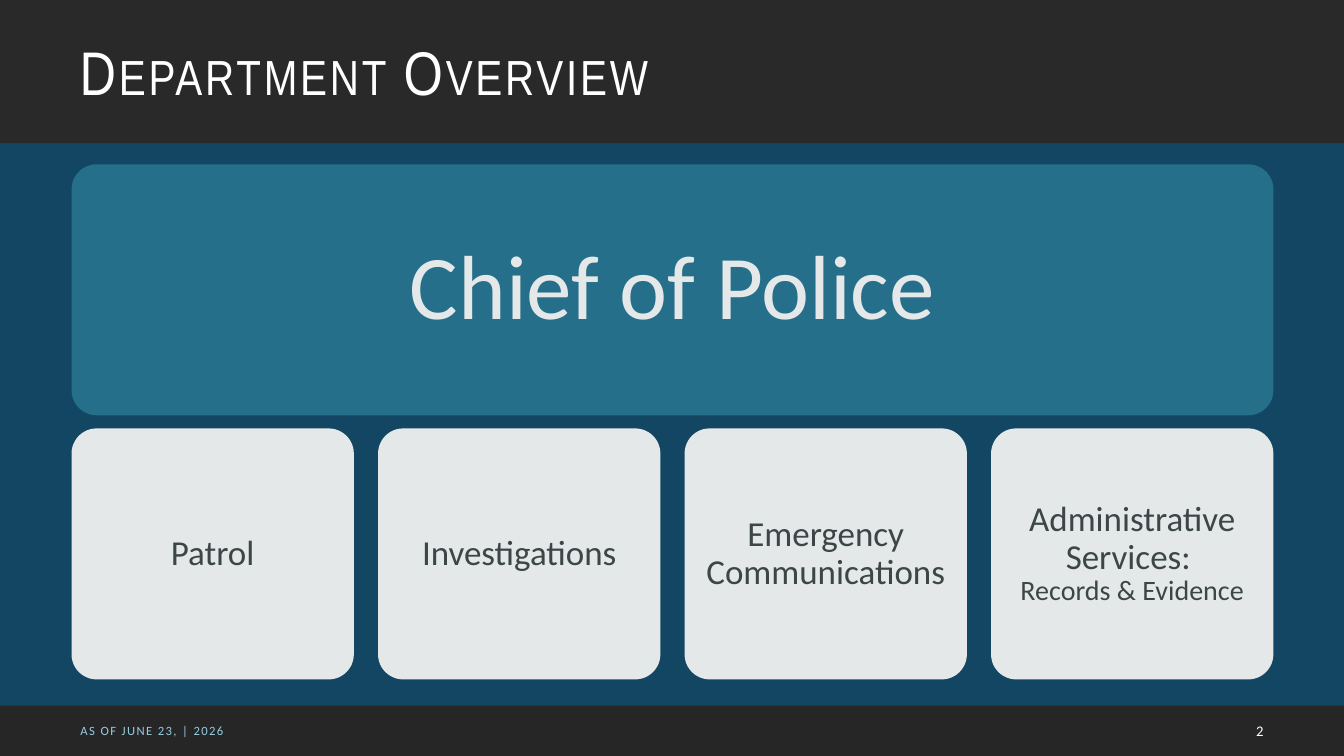
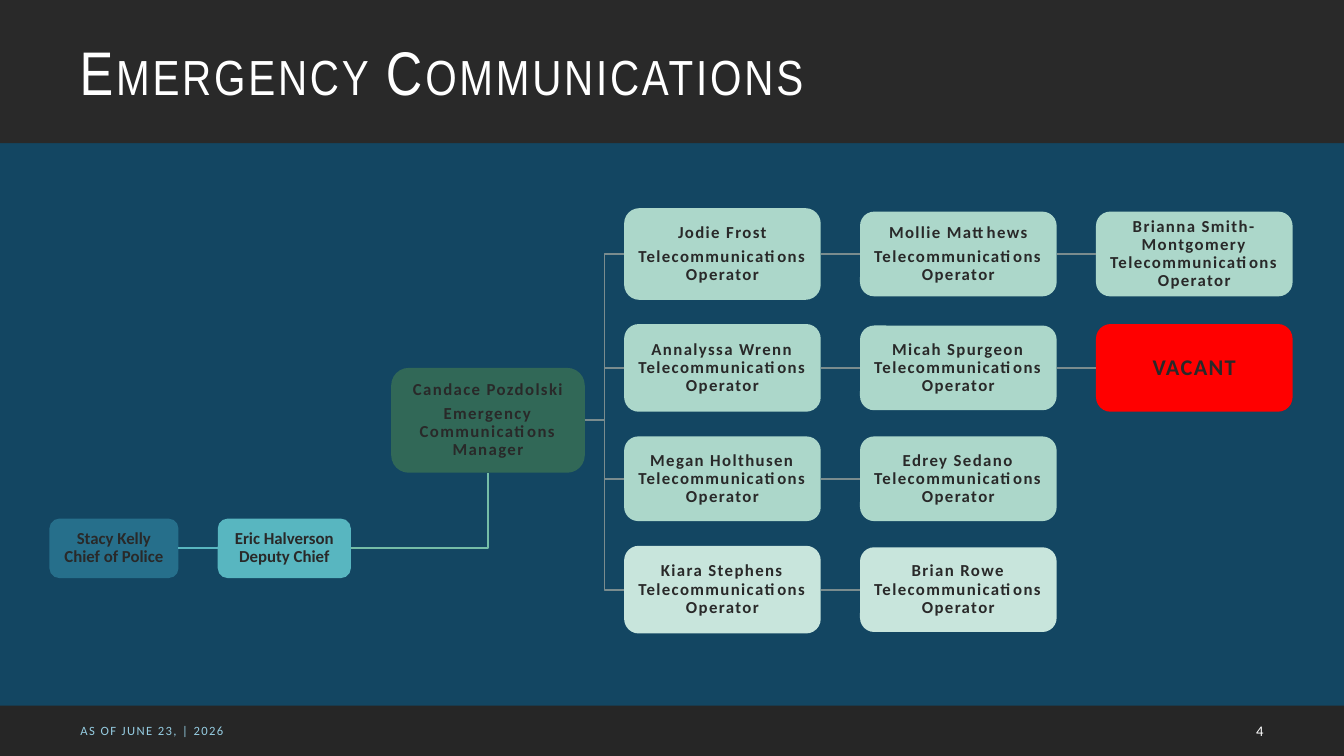
from pptx import Presentation
from pptx.dml.color import RGBColor
from pptx.enum.shapes import MSO_CONNECTOR, MSO_SHAPE
from pptx.enum.text import MSO_ANCHOR, PP_ALIGN
from pptx.oxml.ns import qn
from pptx.util import Inches, Pt
from lxml import etree

RECT, ROUNDED = MSO_SHAPE.RECTANGLE, MSO_SHAPE.ROUNDED_RECTANGLE
STRAIGHT, ELBOW = MSO_CONNECTOR.STRAIGHT, MSO_CONNECTOR.ELBOW
LEFT, CENTER, RIGHT = PP_ALIGN.LEFT, PP_ALIGN.CENTER, PP_ALIGN.RIGHT
MIDDLE = MSO_ANCHOR.MIDDLE
LEFT_SITE, BOTTOM_SITE, RIGHT_SITE = 1, 2, 3

COLORS = {
    "background": "134662",
    "title_band": "292929",
    "footer_band": "262626",
    "footer_text": "96CDE2",
    "white": "FFFFFF",
    "chief": "266F8B",
    "deputy": "58B6C0",
    "manager": "316857",
    "operator": "ACD7CA",
    "operator_light": "C8E5DC",
    "vacant": "FF0000",
    "division": "E4E8E8",
    "division_text": "3D4647",
    "staff_text": "292929",
    "staff_line": "7A8C8E",
    "manager_line": "75BDA7",
}
TITLE_FONT, BODY_FONT = "Arial Narrow", "Calibri"
SLIDE_WIDTH, SLIDE_HEIGHT = 13.33, 7.5
ROLE = "Telecommunications Operator"
VACANT = "VACANT"

DIVISIONS = [
    "Patrol",
    "Investigations",
    "Emergency\vCommunications",
    "Administrative Services: \vRecords & Evidence",
]
STAFF_ROWS = [
    (2.52, 0.91, "operator", "\n",
     ["Jodie Frost", "Mollie Matthews", "Brianna Smith-Montgomery"]),
    (3.65, 0.87, "operator", "\v",
     ["Annalyssa Wrenn", "Micah Spurgeon", VACANT]),
    (4.75, 0.84, "operator", "\v", ["Megan Holthusen", "Edrey Sedano"]),
    (5.85, 0.87, "operator_light", "\v", ["Kiara Stephens", "Brian Rowe"]),
]


def rgb(name):
    return RGBColor.from_string(COLORS[name])


def write(frame, text, size, color, font=BODY_FONT, align=CENTER, bold=False,
          tracking=0, small_caps=False, line_spacing=0.9):
    frame.word_wrap = True
    frame.vertical_anchor = MIDDLE
    frame.text = text
    for paragraph in frame.paragraphs:
        paragraph.alignment = align
        paragraph.line_spacing = line_spacing
        paragraph.font.name = font
        paragraph.font.size = Pt(size)
        paragraph.font.bold = bold
        paragraph.font.color.rgb = rgb(color)
        defaults = paragraph._p.pPr.find(qn("a:defRPr"))
        if tracking:
            defaults.set("spc", str(tracking * 100))
        if small_caps:
            defaults.set("cap", "small")
    for paragraph in frame.paragraphs[:-1]:
        paragraph.space_after = Pt(0.35 * size)


def set_insets(frame, left, top, right, bottom):
    frame.margin_left, frame.margin_top = Inches(left), Inches(top)
    frame.margin_right, frame.margin_bottom = Inches(right), Inches(bottom)


def add_block(slide, kind, box, fill):
    block = slide.shapes.add_shape(kind, *map(Inches, box))
    block.shadow.inherit = False
    block.fill.solid()
    block.fill.fore_color.rgb = rgb(fill)
    block.line.fill.background()
    return block


def add_label(slide, box, text, size, color, **style):
    label = slide.shapes.add_textbox(*map(Inches, box))
    write(label.text_frame, text, size, color, line_spacing=1.0, **style)


def add_card(slide, box, fill, text, size, color, inset, corner=None, **style):
    card = add_block(slide, ROUNDED, box, fill)
    if corner is not None:
        card.adjustments[0] = corner
    set_insets(card.text_frame, *[inset] * 4)
    write(card.text_frame, text, size, color, **style)
    return card


def add_staff(slide, left, middle, width, height, fill, text, size=12, tracking=1):
    box = (left, middle - height / 2, width, height)
    return add_card(slide, box, fill, text, size, "staff_text", 0.01,
                    bold=True, tracking=tracking)


def link(slide, start, end, color, kind=STRAIGHT, end_site=LEFT_SITE):
    connector = slide.shapes.add_connector(kind, 0, 0, 0, 0)
    connector.begin_connect(start, RIGHT_SITE)
    connector.end_connect(end, end_site)
    connector.line.color.rgb = rgb(color)
    connector.line.width = Pt(1.25)
    properties = connector._element.spPr
    etree.SubElement(properties, qn("a:effectLst"))
    if end_site == BOTTOM_SITE:
        properties.find(qn("a:prstGeom")).set("prst", "bentConnector2")


def add_framed_slide(deck, title, number):
    slide = deck.slides.add_slide(deck.slide_layouts[6])
    slide.background.fill.solid()
    slide.background.fill.fore_color.rgb = rgb("background")
    add_block(slide, RECT, (0, 7, SLIDE_WIDTH, 0.5), "footer_band")
    add_label(slide, (0.7, 7.05, 7.46, 0.4), "AS OF JUNE 23, | 2026", 9,
              "footer_text", align=LEFT, tracking=1)
    add_label(slide, (11.95, 7.05, 0.68, 0.4), number, 10.5, "white", align=RIGHT)
    band = add_block(slide, RECT, (0, 0, SLIDE_WIDTH, 1.42), "title_band")
    set_insets(band.text_frame, 0.79, 0.12, 0.1, 0.05)
    write(band.text_frame, title, 44, "white", font=TITLE_FONT, align=LEFT,
          tracking=2, small_caps=True)
    return slide


def build_overview(deck):
    slide = add_framed_slide(deck, "Department Overview", "2")
    left, total, width, height = 0.71, 11.92, 2.8, 2.49
    add_card(slide, (left, 1.63, total, height), "chief", "Chief of Police",
             65, "division", 0.27, corner=0.1)
    step = (total - width) / (len(DIVISIONS) - 1)
    for column, division in enumerate(DIVISIONS):
        box = (left + column * step, 4.25, width, height)
        card = add_card(slide, box, "division", division, 25, "division_text",
                        0.1, corner=0.1)
    card.text_frame.paragraphs[0].runs[-1].font.size = Pt(20)


def build_communications(deck):
    slide = add_framed_slide(deck, "Emergency Communications", "4")
    chief = add_staff(slide, 0.49, 5.44, 1.28, 0.59, "chief",
                      "Stacy Kelly\vChief of Police", tracking=0)
    deputy = add_staff(slide, 2.16, 5.44, 1.32, 0.59, "deputy",
                       "Eric Halverson\vDeputy Chief", tracking=0)
    manager = add_staff(slide, 3.88, 4.17, 1.92, 1.04, "manager",
                        "Candace Pozdolski\nEmergency Communications Manager")
    link(slide, chief, deputy, "deputy")
    link(slide, deputy, manager, "manager_line", ELBOW, BOTTOM_SITE)

    for middle, lead_height, fill, separator, names in STAFF_ROWS:
        previous = manager
        for column, name in enumerate(names):
            left = 6.19 + column * 2.34
            if name == VACANT:
                card = add_staff(slide, left, middle, 1.95, lead_height,
                                 "vacant", name, size=16)
            else:
                height = 0.84 if column else lead_height
                gap = separator if column < 2 else "\v"
                card = add_staff(slide, left, middle, 1.95, height, fill,
                                 f"{name}{gap}{ROLE}")
            link(slide, previous, card, "staff_line", STRAIGHT if column else ELBOW)
            previous = card


def main():
    deck = Presentation()
    deck.slide_width = Inches(SLIDE_WIDTH)
    deck.slide_height = Inches(SLIDE_HEIGHT)
    build_overview(deck)
    build_communications(deck)
    deck.save("out.pptx")


if __name__ == "__main__":
    main()
